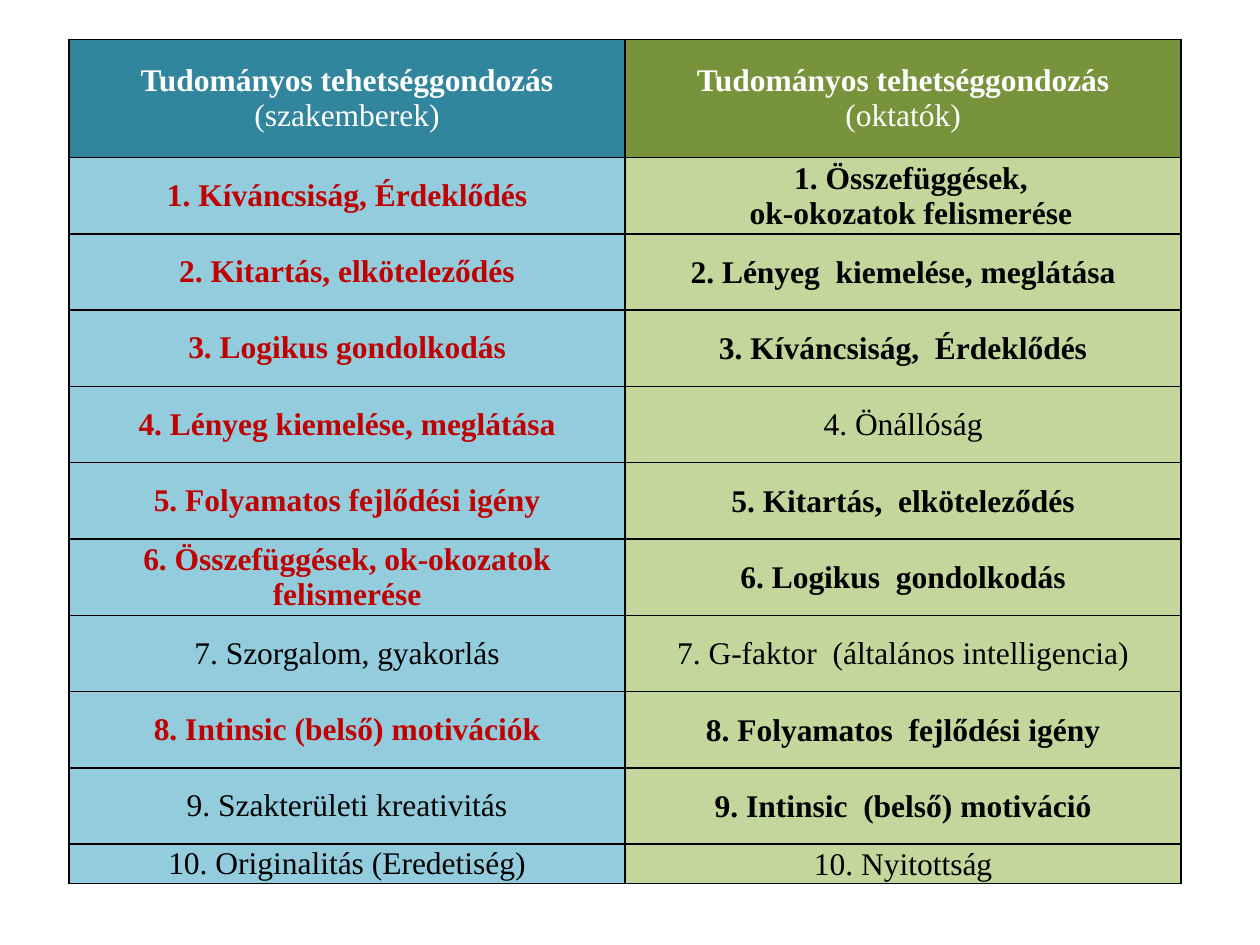
from lxml import etree
from pptx import Presentation
from pptx.dml.color import RGBColor
from pptx.enum.text import MSO_ANCHOR, PP_ALIGN
from pptx.oxml.ns import qn
from pptx.util import Pt

CENTER = PP_ALIGN.CENTER
MIDDLE = MSO_ANCHOR.MIDDLE
FONT = {"name": "Times New Roman", "size": Pt(18)}
HEAD_HEIGHT, ROW_HEIGHT, LAST_HEIGHT = 67.5, 43.6, 22.5
BLACK, WHITE, RED = "000000", "FFFFFF", "C00000"

SPECIALISTS = {
    "title": "Tudományos tehetséggondozás",
    "group": "(szakemberek)",
    "head_fill": "31859C",
    "fill": "93CDDD",
    "strong": RED,
    "margins": (5, 0, 5, 0),
    "traits": [
        ("1. Kíváncsiság, Érdeklődés", True),
        ("2. Kitartás, elköteleződés", True),
        ("3. Logikus gondolkodás", True),
        ("4. Lényeg kiemelése, meglátása", True),
        ("5. Folyamatos fejlődési igény", True),
        ("6. Összefüggések, ok-okozatok felismerése", True),
        ("7. Szorgalom, gyakorlás", False),
        ("8. Intinsic (belső) motivációk", True),
        ("9. Szakterületi kreativitás", False),
        ("10. Originalitás (Eredetiség)", False),
    ],
}
TEACHERS = {
    "title": "Tudományos tehetséggondozás",
    "group": "(oktatók)",
    "head_fill": "77933C",
    "fill": "C3D69B",
    "strong": BLACK,
    "margins": (0.7, 0.7, 0.7, 0),
    "traits": [
        ("1. Összefüggések,\vok-okozatok felismerése", True),
        ("2. Lényeg  kiemelése, meglátása", True),
        ("3. Kíváncsiság,  Érdeklődés", True),
        ("4. Önállóság", False),
        ("5. Kitartás,  elköteleződés", True),
        ("6. Logikus  gondolkodás", True),
        ("7. G-faktor  (általános intelligencia)", False),
        ("8. Folyamatos  fejlődési igény", True),
        ("9. Intinsic  (belső) motiváció", True),
        ("10. Nyitottság", False),
    ],
}


def rgb(value):
    return RGBColor.from_string(value)


def set_borders(cell, color, width):
    tc_pr = cell._tc.get_or_add_tcPr()
    for side in ("a:lnL", "a:lnR", "a:lnT", "a:lnB"):
        ln = etree.SubElement(tc_pr, qn(side), w=str(Pt(width)))
        fill = etree.SubElement(ln, qn("a:solidFill"))
        etree.SubElement(fill, qn("a:srgbClr"), val=color)


def fill_cell(cell, lines, fill, color, margins):
    set_borders(cell, BLACK, 1)
    cell.fill.solid()
    cell.fill.fore_color.rgb = rgb(fill)
    cell.vertical_anchor = MIDDLE
    for side, margin in zip(("left", "top", "right", "bottom"), margins):
        setattr(cell, f"margin_{side}", Pt(margin))
    tf = cell.text_frame
    for i, (text, bold) in enumerate(lines):
        p = tf.add_paragraph() if i else tf.paragraphs[0]
        p.text = text
        p.alignment = CENTER
        for r in p.runs:
            for name, value in {**FONT, "bold": bold}.items():
                setattr(r.font, name, value)
            r.font.color.rgb = rgb(color)


def add_trait_table(slide, groups, left, top, width):
    traits = len(groups[0]["traits"])
    heights = [HEAD_HEIGHT] + [ROW_HEIGHT] * (traits - 1) + [LAST_HEIGHT]
    table = slide.shapes.add_table(
        len(heights), len(groups), Pt(left), Pt(top), Pt(width), Pt(sum(heights))
    ).table
    table.first_row = table.horz_banding = False
    for row, height in zip(table.rows, heights):
        row.height = Pt(height)
    for col, group in enumerate(groups):
        table.columns[col].width = Pt(width / len(groups))
        head = [(group["title"], True), (group["group"], False)]
        fill_cell(table.cell(0, col), head, group["head_fill"], WHITE, (5, 0, 5, 0))
        for row, (text, bold) in enumerate(group["traits"], 1):
            color = group["strong"] if bold else BLACK
            fill_cell(
                table.cell(row, col), [(text, bold)], group["fill"], color, group["margins"]
            )
    return table


def main():
    prs = Presentation()
    prs.slide_width, prs.slide_height = Pt(720), Pt(540)
    slide = prs.slides.add_slide(prs.slide_layouts[6])
    table = add_trait_table(slide, [SPECIALISTS, TEACHERS], 39.5, 22.5, 635.5)
    table.cell(1, 1).margin_left = Pt(9.7)
    prs.save("out.pptx")


if __name__ == "__main__":
    main()
